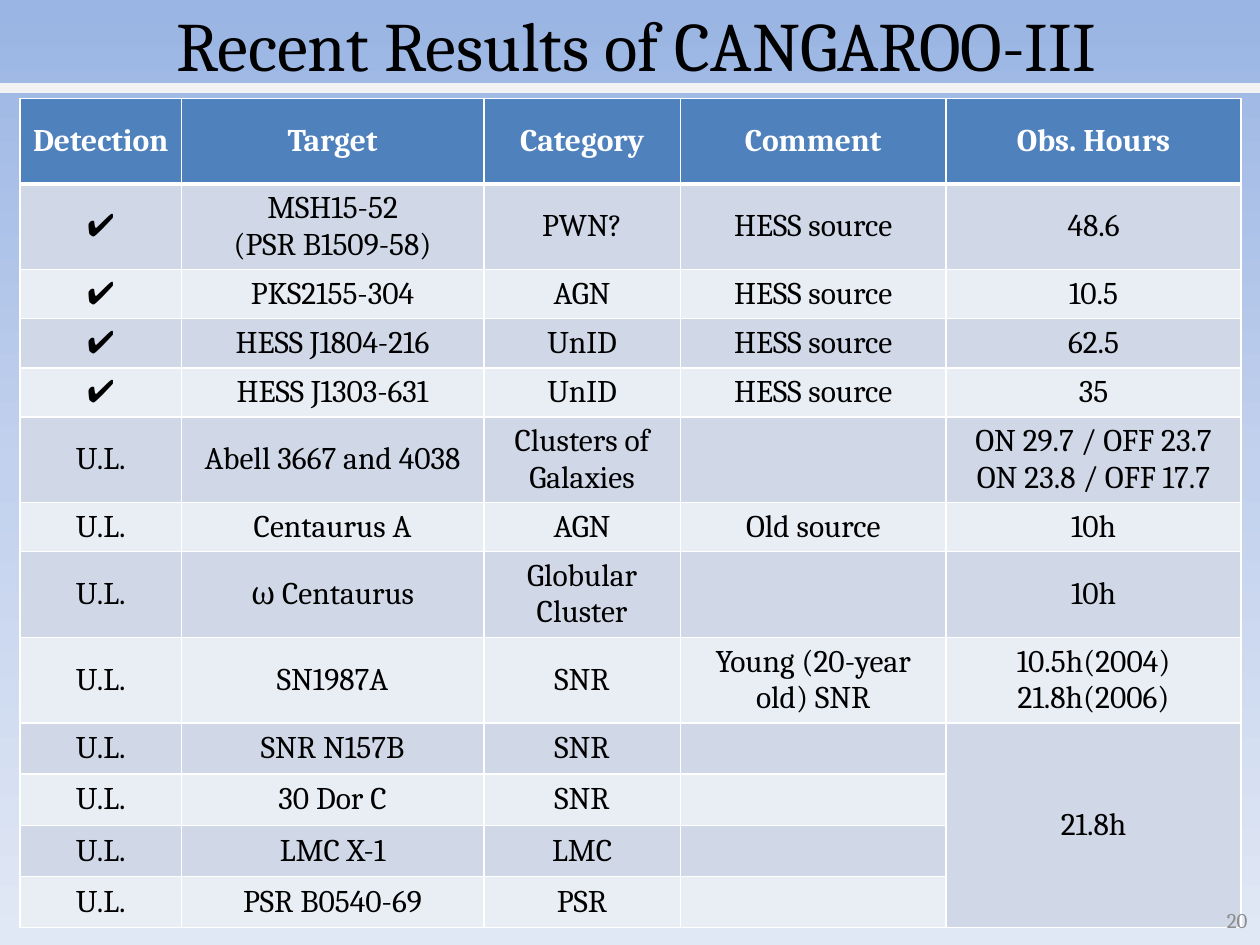
from copy import deepcopy
from dataclasses import dataclass

from pptx import Presentation
from pptx.dml.color import RGBColor as Rgb
from pptx.enum.text import MSO_ANCHOR as Anchor, PP_ALIGN as Align
from pptx.oxml import parse_xml
from pptx.oxml.ns import nsdecls, qn
from pptx.util import Inches, Pt


@dataclass(frozen=True)
class Theme:
    font: str = "Cambria"
    black: str = "000000"
    white: str = "FFFFFF"
    gray: str = "8C8C8C"
    rule: str = "F2F2F2"
    head: str = "4F81BD"
    bands: tuple = ("D0D8E8", "E9EDF4")
    sky: tuple = ((0, "9AB5E4"), (0.5, "C2D1ED"), (1, "E1E8F5"))
    title: float = 39.6
    body: float = 18
    small: float = 12


THEME = Theme()
TICK, LIMIT = "✔", "U.L."
COLS = (1.28, 2.4, 1.56, 2.11, 2.34)
TALL, LOW = 0.68, 0.39
SPAN = 4  # the last rows share one value of hours

# Each row: height, then the five cells
ROWS = (
    (TALL, "Detection", "Target", "Category", "Comment", "Obs. Hours"),
    (TALL, TICK, "MSH15-52\n(PSR B1509-58)", "PWN?", "HESS source", "48.6"),
    (LOW, TICK, "PKS2155-304", "AGN", "HESS source", "10.5"),
    (LOW, TICK, "HESS J1804-216", "UnID", "HESS source", "62.5"),
    (LOW, TICK, "HESS J1303-631", "UnID", "HESS source", "35"),
    (TALL, LIMIT, "Abell 3667 and 4038", "Clusters of Galaxies", "",
     "ON 29.7 / OFF 23.7\nON 23.8 / OFF 17.7"),
    (LOW, LIMIT, "Centaurus A", "AGN", "Old source", "10h"),
    (TALL, LIMIT, "ω Centaurus", "Globular Cluster", "", "10h"),
    (TALL, LIMIT, "SN1987A", "SNR", "Young (20-year old) SNR",
     "10.5h(2004)\n21.8h(2006)"),
    (LOW, LIMIT, "SNR N157B", "SNR", "", "21.8h"),
    (LOW, LIMIT, "30 Dor C", "SNR", "", ""),
    (LOW, LIMIT, "LMC X-1", "LMC", "", ""),
    (LOW, LIMIT, "PSR B0540-69", "PSR", "", ""),
)


def put_text(frame, text, size, color, align=Align.CENTER, bold=False):
    par = frame.paragraphs[0]
    par.alignment = align
    par.font.size = Pt(size)
    for num, line in enumerate(text.split("\n")):
        if num:
            par.add_line_break()
        if line:
            run = par.add_run()
            run.text = line
            font = run.font
            font.name, font.size, font.bold = THEME.font, Pt(size), bold
            font.color.rgb = Rgb.from_string(color)


def paint_back(slide):
    fill = slide.background.fill
    fill.gradient()
    fill.gradient_angle = 270
    stops = slide.element.find(".//" + qn("a:gsLst"))
    stops.append(deepcopy(stops[-1]))
    for stop, (pos, color) in zip(fill.gradient_stops, THEME.sky):
        stop.position = pos
        stop.color.rgb = Rgb.from_string(color)


def add_rule(slide, top, width):
    line = slide.shapes.add_connector(1, 0, Inches(top), Inches(width), Inches(top))
    line.line.color.rgb = Rgb.from_string(THEME.rule)
    line.line.width = Pt(6)
    line._element.spPr.append(parse_xml(f"<a:effectLst {nsdecls('a')}/>"))


def set_title(slide, text):
    box = slide.shapes.title
    box.left, box.top = Inches(0.55), 0
    box.width, box.height = Inches(9), Inches(0.7)
    box.text_frame.vertical_anchor = Anchor.MIDDLE
    put_text(box.text_frame, text, THEME.title, THEME.black)


def add_edges(cell, row):
    props = cell._tc.get_or_add_tcPr()
    wide = {"T": row == 1, "B": row == 0}
    for side in "LRTB":
        size = Pt(3 if wide.get(side) else 1)
        props.append(parse_xml(
            f'<a:ln{side} {nsdecls("a")} w="{size}"><a:solidFill>'
            f'<a:srgbClr val="{THEME.white}"/></a:solidFill></a:ln{side}>'))


def fill_cell(cell, row, text):
    top = row == 0
    add_edges(cell, row)
    cell.fill.solid()
    color = THEME.head if top else THEME.bands[(row - 1) % 2]
    cell.fill.fore_color.rgb = Rgb.from_string(color)
    cell.vertical_anchor = Anchor.MIDDLE
    ink = THEME.white if top else THEME.black
    put_text(cell.text_frame, text, THEME.body, ink, bold=top)


def add_grid(slide):
    high = sum(row[0] for row in ROWS)
    grid = slide.shapes.add_table(
        len(ROWS), len(COLS), Inches(0.16), Inches(0.78),
        Inches(sum(COLS)), Inches(high)).table
    for col, width in zip(grid.columns, COLS):
        col.width = Inches(width)
    for num, (height, *texts) in enumerate(ROWS):
        grid.rows[num].height = Inches(height)
        for col, text in enumerate(texts):
            fill_cell(grid.cell(num, col), num, text)
    last = len(COLS) - 1
    grid.cell(len(ROWS) - SPAN, last).merge(grid.cell(len(ROWS) - 1, last))


def add_page(slide, text):
    box = slide.shapes.add_textbox(
        Inches(7.67), Inches(7.1), Inches(2.33), Inches(0.4))
    frame = box.text_frame
    frame.word_wrap = True
    frame.vertical_anchor = Anchor.MIDDLE
    put_text(frame, text, THEME.small, THEME.gray, Align.RIGHT)


def main():
    deck = Presentation()
    deck.slide_width, deck.slide_height = Inches(10), Inches(7.5)
    slide = deck.slides.add_slide(deck.slide_layouts[5])
    # Backdrop and heading
    paint_back(slide)
    add_rule(slide, 0.7, 10)
    set_title(slide, "Recent Results of CANGAROO-III")
    # Observations and page number
    add_grid(slide)
    add_page(slide, "20")
    deck.save("out.pptx")


if __name__ == "__main__":
    main()
